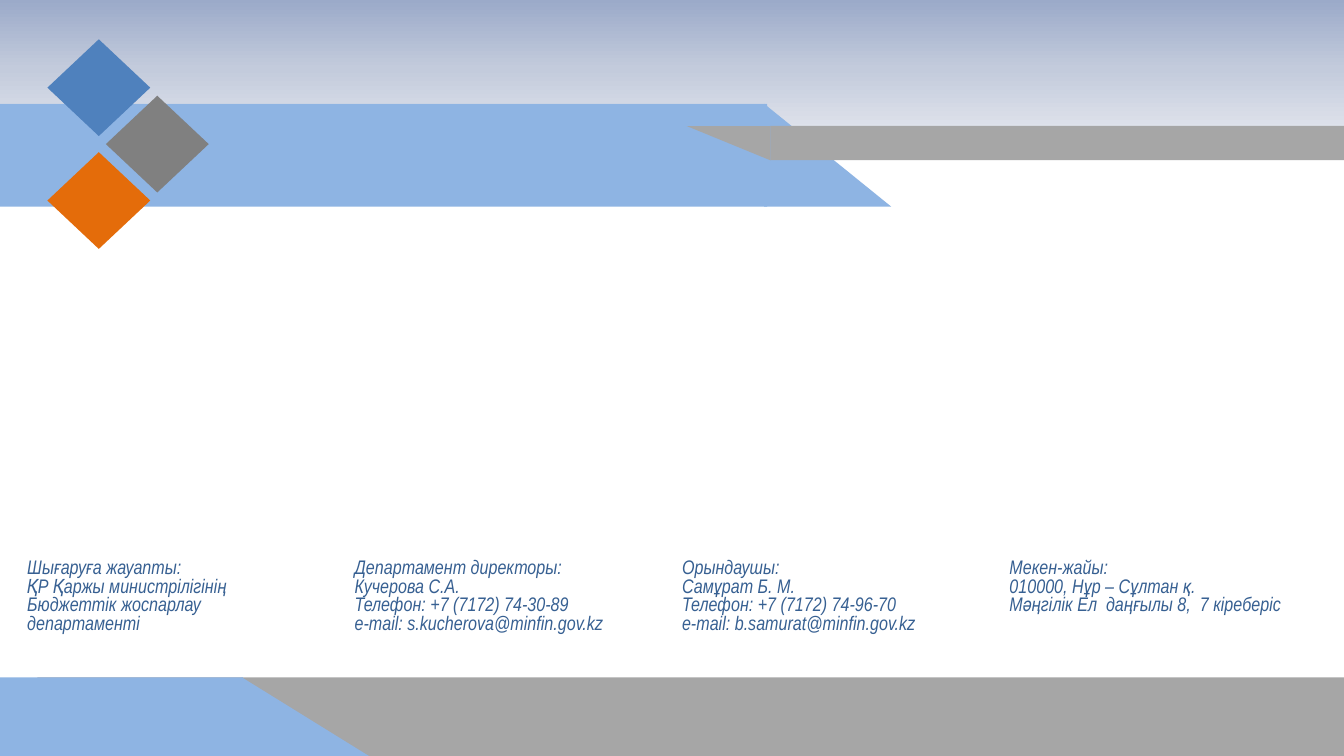
from copy import deepcopy
from dataclasses import dataclass

from lxml.etree import SubElement
from pptx import Presentation
from pptx.dml.color import RGBColor as RGB
from pptx.enum.shapes import MSO_SHAPE as Shape
from pptx.oxml.ns import qn
from pptx.util import Inches, Pt


@dataclass(frozen=True)
class Theme:
    sky: tuple = ((0, "9BAAC9"), (0.5, "C3CBDC"), (1, "E2E5ED"))
    light_blue: str = "8EB4E3"
    gray: str = "A6A6A6"
    diamonds: tuple = ("4F81BD", "808080", "E46C0A")
    text: str = "376092"
    border: str = "FFFFFF"
    font: str = "Arial Narrow"
    size: int = 14


theme = Theme()

prs = Presentation()
prs.slide_width, prs.slide_height = Inches(13.33), Inches(7.5)
slide = prs.slides.add_slide(prs.slide_layouts[6])


def add_block(kind, left, top, width, height, color):
    """Add a flat preset shape without outline or shadow."""
    block = slide.shapes.add_shape(
        kind, Inches(left), Inches(top), Inches(width), Inches(height))
    block.shadow.inherit = False
    block.line.fill.background()
    block.fill.solid()
    block.fill.fore_color.rgb = RGB.from_string(color)
    return block


def add_border(cell, side, width):
    line = SubElement(cell._tc.get_or_add_tcPr(), qn(f"a:ln{side}"), w=str(Pt(width)))
    SubElement(SubElement(line, qn("a:solidFill")), qn("a:srgbClr"), val=theme.border)


# Bands
add_block(Shape.RECTANGLE, 0.37, 6.72, 12.96, 0.78, theme.gray)

sky = add_block(Shape.RECTANGLE, -0.02, 0, 13.36, 1.36, theme.gray)
sky.fill.gradient()
sky.fill.gradient_angle = 270
stop_list = next(sky._element.iter(qn("a:gsLst")))
stop_list.insert(1, deepcopy(stop_list[0]))
for stop, (position, color) in zip(sky.fill.gradient_stops, theme.sky):
    stop.position = position
    stop.color.rgb = RGB.from_string(color)

add_block(Shape.RECTANGLE, -0.02, 1.03, 7.63, 1.02, theme.light_blue)
add_block(Shape.RIGHT_TRIANGLE, 7.58, 1.03, 1.26, 1.02, theme.light_blue)
add_block(Shape.RECTANGLE, 7.64, 1.25, 5.69, 0.34, theme.gray)
gray_tip = add_block(Shape.RIGHT_TRIANGLE, 6.81, 1.25, 0.83, 0.34, theme.gray)
gray_tip.rotation = 180
add_block(Shape.RECTANGLE, 0, 6.72, 2.41, 0.78, theme.light_blue)
add_block(Shape.RIGHT_TRIANGLE, 2.4, 6.72, 1.26, 0.78, theme.light_blue)

# Diamonds, stepping down in a zigzag
for i, color in enumerate(theme.diamonds):
    add_block(Shape.FLOWCHART_DECISION, 0.47 + 0.58 * (i % 2), 0.39 + 0.56 * i,
              1.02, 0.96, color)

# Contacts
contacts = (
    ("Шығаруға жауапты:", "ҚР Қаржы министрілігінің",
     "Бюджеттік жоспарлау", "департаменті"),
    ("Департамент директоры:", "Кучерова С.А.",
     "Телефон: +7 (7172) 74-30-89", "e-mail: s.kucherova@minfin.gov.kz"),
    ("Орындаушы:", "Самұрат Б. М.",
     "Телефон: +7 (7172) 74-96-70", "e-mail: b.samurat@minfin.gov.kz"),
    ("Мекен-жайы:", "010000, Нұр – Сұлтан қ.",
     "Мәңгілік Ел  даңғылы 8,  7 кіреберіс"),
)
contact_table = slide.shapes.add_table(
    1, len(contacts), Inches(0.17), Inches(5.51), Inches(12.99), Inches(1.18)).table
contact_table.first_row = contact_table.horz_banding = False

for cell, lines in zip(contact_table.rows[0].cells, contacts):
    for side, width in (("L", 1), ("R", 1), ("T", 1), ("B", 3)):
        add_border(cell, side, width)
    cell.fill.background()
    frame = cell.text_frame
    for i, line in enumerate(lines):
        paragraph = frame.add_paragraph() if i else frame.paragraphs[0]
        paragraph.line_spacing = 1.0
        run = paragraph.add_run()
        run.text = line
        run.font.name = theme.font
        run.font.size = Pt(theme.size)
        run.font.italic = True
        run.font.color.rgb = RGB.from_string(theme.text)

prs.save("out.pptx")
